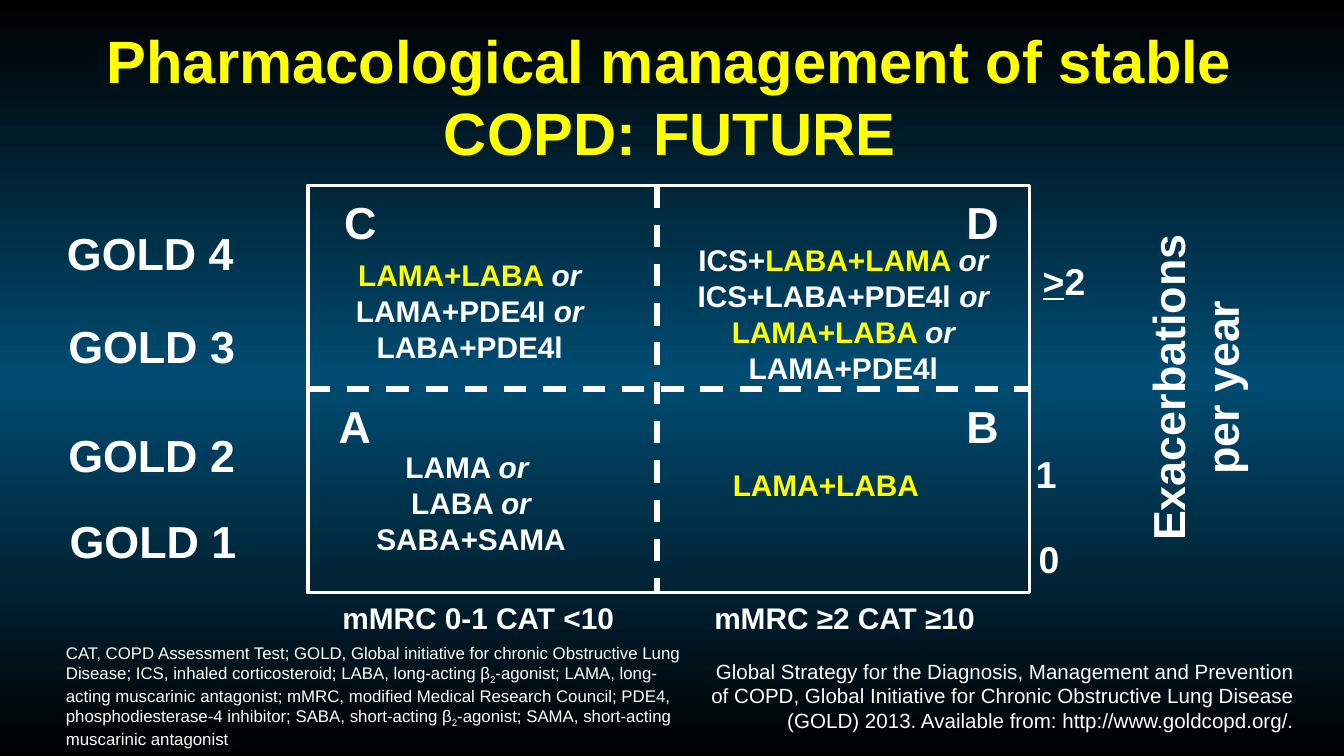
"""Build the slide on pharmacological management of stable COPD."""
import copy

import pptx
import pptx.dml.color
import pptx.enum.dml
import pptx.enum.shapes
import pptx.enum.text
import pptx.oxml.ns
import pptx.util
from lxml import etree

WHITE, YELLOW = "FFFFFF", "FFFF00"
ALIGN = pptx.enum.text.PP_ALIGN
ANCHOR = pptx.enum.text.MSO_ANCHOR
SLIDE_W = 10
SLIDE_H = SLIDE_W * 9 / 16
LEFT, TOP, WIDTH, HEIGHT = 2.29, 1.38, 5.37, 3.03
RIGHT, BOTTOM = LEFT + WIDTH, TOP + HEIGHT
MID_X, MID_Y = 4.89, TOP + HEIGHT / 2
LETTER_H = 0.5

TITLE = "Pharmacological management of stable COPD: FUTURE"
BACKGROUND = [(0, "000000"), (0.5, "004C72"), (1, "000000")]
OR = ("or", "italic")
LETTERS = [("C", 0, 0, 0.78), ("D", 1, 0, 0.7), ("A", 0, 1, 0.7), ("B", 1, 1, 0.7)]
TREATMENTS = [
    ((2.54, 1.86, 1.91, 0.91), False, [
        [("LAMA+LABA ", "yellow"), OR],
        [("LAMA+PDE4I ", ""), OR],
        [("LABA+PDE4l", "")]]),
    ((5.08, 1.75, 2.39, 1.18), False, [
        [("ICS+", ""), ("LABA+LAMA ", "yellow"), OR],
        [("ICS+LABA+PDE4l ", ""), OR, ("", "break"), ("LAMA+LABA ", "yellow"), OR],
        [("LAMA+PDE4l", "")]]),
    ((2.69, 3.29, 1.63, 0.91), False, [
        [("LAMA ", ""), ("or ", "italic")],
        [("LABA ", ""), OR],
        [("SABA+SAMA", "")]]),
    ((5.24, 3.42, 1.81, 0.37), True, [[("LAMA+LABA", "yellow")]]),
]
GOLD_STAGES = [
    ("GOLD 4", 0.4, 1.63), ("GOLD 3", 0.41, 2.32),
    ("GOLD 2", 0.41, 3.13), ("GOLD 1", 0.42, 3.77),
]
COUNTS = [
    ([(">", "underline"), ("2", "")], (7.66, 1.87, 0.6, 0.44)),
    ([("1", "")], (7.61, 3.31, 0.36, 0.44)),
    ([("0", "")], (7.63, 3.94, 0.36, 0.44)),
]
SYMPTOMS = [("mMRC 0-1 CAT <10 ", LEFT, 2.6, True), ("mMRC ≥2 CAT ≥10 ", 5.2, 2.23, False)]
ABBREVIATIONS = [
    ("CAT, COPD Assessment Test; GOLD, Global initiative for chronic Obstructive Lung "
     "Disease; ICS, inhaled corticosteroid; LABA, long-acting β", ""),
    ("2", "subscript"),
    ("-agonist; LAMA, long-acting muscarinic antagonist; mMRC, modified Medical Research "
     "Council; PDE4, phosphodiesterase-4 inhibitor; SABA, short-acting β", ""),
    ("2", "subscript"),
    ("-agonist; SAMA, short-acting muscarinic antagonist", ""),
]
REFERENCE = (
    "Global Strategy for the Diagnosis, Management and Prevention of COPD, Global "
    "Initiative for Chronic Obstructive Lung Disease (GOLD) 2013. Available from: "
    "http://www.goldcopd.org/.")


def rgb(value):
    return pptx.dml.color.RGBColor.from_string(value)


def inches(*values):
    return [pptx.util.Inches(v) for v in values]


def style_paragraph(p, size, align, color=WHITE, bold=True):
    p.alignment = align
    p.font.name, p.font.size, p.font.bold = "Arial", pptx.util.Pt(size), bold
    p.font.color.rgb = rgb(color)


def add_run(p, text, style):
    if style == "break":
        p.add_line_break()
        return
    r = p.add_run()
    r.text = text
    if style == "yellow":
        r.font.color.rgb = rgb(YELLOW)
    elif style == "italic":
        r.font.italic = True
    elif style == "underline":
        r.font.underline = True
    elif style == "subscript":
        r.font._element.set("baseline", "-25000")


def add_text(s, box, lines, size, align=ALIGN.CENTER, bold=True, wrap=True):
    sp = s.shapes.add_textbox(*inches(*box))
    tf = sp.text_frame
    tf.word_wrap = wrap
    for i, line in enumerate(lines):
        p = tf.add_paragraph() if i else tf.paragraphs[0]
        style_paragraph(p, size, align, bold=bold)
        for text, style in line:
            add_run(p, text, style)
    return sp


def add_note(s, box, line, size, align):
    tf = add_text(s, box, [line], size, align, bold=False).text_frame
    tf.margin_left = tf.margin_right = tf.margin_top = tf.margin_bottom = 0
    tf.vertical_anchor = ANCHOR.MIDDLE


def add_divider(s, x1, y1, x2, y2):
    line = s.shapes.add_connector(
        pptx.enum.shapes.MSO_CONNECTOR.STRAIGHT, *inches(x1, y1, x2, y2))
    line.line.color.rgb = rgb(WHITE)
    line.line.width = pptx.util.Pt(3)
    line.line.dash_style = pptx.enum.dml.MSO_LINE.DASH
    etree.SubElement(line._element.spPr, pptx.oxml.ns.qn("a:effectLst"))
    return line


def paint_background(s):
    fill = s.background.fill
    fill.gradient()
    fill.gradient_angle = 90
    first = fill.gradient_stops[0]._gs
    first.addnext(copy.deepcopy(first))
    for stop, (position, color) in zip(fill.gradient_stops, BACKGROUND):
        stop.position = position
        stop.color.rgb = rgb(color)


def add_title(s):
    title = s.shapes.title
    title.left, title.top, title.width, title.height = inches(0.18, 0.13, 9.61, 1.72)
    tf = title.text_frame
    tf.text = TITLE
    tf.word_wrap = True
    tf.auto_size = pptx.enum.text.MSO_AUTO_SIZE.NONE
    tf.vertical_anchor = ANCHOR.TOP
    style_paragraph(tf.paragraphs[0], 32, ALIGN.CENTER, YELLOW)


def add_matrix(s):
    frame = s.shapes.add_shape(
        pptx.enum.shapes.MSO_SHAPE.RECTANGLE, *inches(LEFT, TOP, WIDTH, HEIGHT))
    frame.shadow.inherit = False
    frame.fill.background()
    frame.line.color.rgb = rgb(WHITE)
    frame.line.width = pptx.util.Pt(2)
    across = add_divider(s, LEFT, MID_Y, RIGHT, MID_Y)
    across.begin_connect(frame, 1)
    across.end_connect(frame, 3)
    add_divider(s, MID_X, TOP, MID_X, BOTTOM)
    for letter, col, row, width in LETTERS:
        x = LEFT + col * (WIDTH - width)
        y = TOP + 0.02 + row * HEIGHT / 2
        add_text(s, (x, y, width, LETTER_H), [[(letter, "")]], 24)
    for box, wrap, lines in TREATMENTS:
        add_text(s, box, lines, 16, wrap=wrap)


def add_axes(s):
    for stage, x, y in GOLD_STAGES:
        add_text(s, (x, y, 1.64, 0.5), [[(stage, "")]], 24, ALIGN.LEFT, wrap=False)
    for line, box in COUNTS:
        add_text(s, box, [line], 20, ALIGN.LEFT, wrap=False)
    for label, x, width, wrap in SYMPTOMS:
        add_text(s, (x, BOTTOM, width, 0.37), [[(label, "")]], 16, wrap=wrap)
    axis = add_text(s, (7.72, 2.23, 2.74, 1.31), [[("Exacerbations per year", "")]], 24)
    axis.rotation = 270


def main():
    prs = pptx.Presentation()
    prs.slide_width, prs.slide_height = inches(SLIDE_W, SLIDE_H)
    s = prs.slides.add_slide(prs.slide_layouts[5])
    paint_background(s)
    add_title(s)
    add_matrix(s)
    add_axes(s)
    add_note(s, (0.49, 4.89, 4.69, 0.57), ABBREVIATIONS, 9, ALIGN.LEFT)
    add_note(s, (5.18, 4.94, 4.45, 0.47), [(REFERENCE, "")], 11, ALIGN.RIGHT)
    prs.save("out.pptx")


if __name__ == "__main__":
    main()
